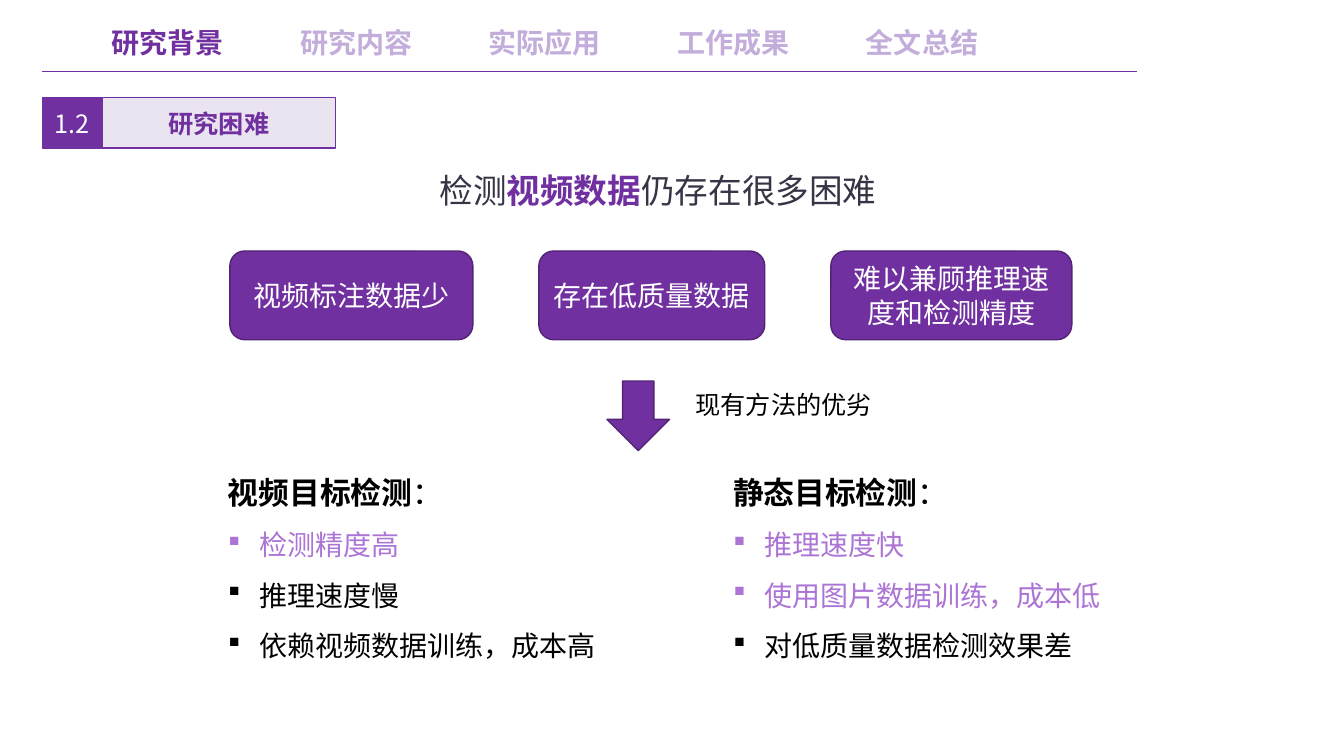
from dataclasses import dataclass
from lxml.etree import SubElement
from pptx import Presentation
from pptx.dml.color import RGBColor as Rgb
from pptx.enum.shapes import MSO_CONNECTOR as Link, MSO_SHAPE as Form
from pptx.enum.text import MSO_ANCHOR as Anchor, MSO_AUTO_SIZE as Fit, PP_ALIGN as Align
from pptx.oxml.ns import qn
from pptx.util import Inches, Pt

CELL = Inches(0.1)
COLS, ROWS = 133.3, 75


@dataclass(frozen=True)
class Theme:
    """Colours, type sizes and the font of the slide."""
    main: str = "7030A0"
    edge: str = "532476"
    pale: str = "E9E4EF"
    dim: str = "C2ADDB"
    good: str = "AB74D5"
    ink: str = "373545"
    black: str = "000000"
    white: str = "FFFFFF"
    title: int = 24
    head: int = 22
    text: int = 20
    note: int = 18
    font: str = "Noto Sans CJK SC"


@dataclass(frozen=True)
class Box:
    """A region measured in grid cells."""
    x: float
    y: float
    w: float
    h: float

    def sub(self, x, y, w, h):
        """Return a box placed relative to this one."""
        return Box(self.x + x, self.y + y, w, h)

    def emu(self):
        """Return left, top, width and height as lengths."""
        return [round(n * CELL) for n in (self.x, self.y, self.w, self.h)]


T = Theme()


def style(para, size, color, bold=False):
    """Set the font of a whole paragraph."""
    font = para.font
    font.size, font.bold, font.name = Pt(size), bold, T.font
    font.color.rgb = Rgb.from_string(color)
    SubElement(font._element, qn("a:ea"), typeface=T.font)


def put(holder, box):
    """Move a placeholder into a box and return its text frame."""
    holder.left, holder.top, holder.width, holder.height = box.emu()
    frame = holder.text_frame
    frame.auto_size, frame.word_wrap = Fit.NONE, True
    frame.vertical_anchor = Anchor.TOP
    return frame


def label(slide, box, text, size, color, bold=False):
    """Add one line of text."""
    frame = slide.shapes.add_textbox(*box.emu()).text_frame
    frame.word_wrap = False
    frame.text = text
    style(frame.paragraphs[0], size, color, bold)


def block(slide, box, form, fill, edge):
    """Add a filled shape with a thin outline."""
    shape = slide.shapes.add_shape(form, *box.emu())
    shape.shadow.inherit = False
    shape.fill.solid()
    shape.fill.fore_color.rgb = Rgb.from_string(fill)
    shape.line.color.rgb = Rgb.from_string(edge)
    shape.line.width = Pt(1)
    return shape


def write(shape, text, size, color, bold=False):
    """Centre a text in a shape."""
    frame = shape.text_frame
    frame.word_wrap, frame.vertical_anchor = True, Anchor.MIDDLE
    frame.text = text
    para = frame.paragraphs[0]
    para.alignment = Align.CENTER
    style(para, size, color, bold)


def nav(slide, box, names, now):
    """Draw the section names above a rule."""
    left, top, width, high = box.emu()
    base = top + high
    rule = slide.shapes.add_connector(Link.STRAIGHT, left, base, left + width, base)
    rule.line.color.rgb = Rgb.from_string(T.main)
    rule.line.width = Pt(1)
    SubElement(rule._element.spPr, qn("a:effectLst"))
    for i, name in enumerate(names):
        spot = box.sub(5.9 + 18.7 * i, 0, 13.2, 4.4)
        label(slide, spot, name, T.text, T.main if i == now else T.dim, True)


def badge(slide, box, num, name):
    """Draw the number and name of the section."""
    cut = 5.9
    mark = block(slide, box.sub(0, 0, cut, box.h), Form.RECTANGLE, T.main, T.main)
    write(mark, num, T.note, T.white)
    rest = box.sub(cut, 0, box.w - cut, box.h)
    write(block(slide, rest, Form.RECTANGLE, T.pale, T.main), name, T.note, T.main, True)


def title(slide, box, parts):
    """Fill the title, with its key words in bold."""
    para = put(slide.shapes.title, box).paragraphs[0]
    para.alignment = Align.LEFT
    style(para, T.title, T.ink)
    for text, key in parts:
        run = para.add_run()
        run.text = text
        if key:
            run.font.bold = True
            run.font.color.rgb = Rgb.from_string(T.main)


def cards(slide, box, items):
    """Draw a row of cards with equal gaps."""
    gap = (box.w - sum(wide for _, wide in items)) / (len(items) - 1)
    x = 0
    for text, wide in items:
        card = block(slide, box.sub(x, 0, wide, box.h), Form.ROUNDED_RECTANGLE, T.main, T.edge)
        write(card, text, T.text, T.white)
        x += wide + gap


def step(slide, box, text):
    """Draw the down arrow with its note."""
    block(slide, box.sub(0, 0, 6.2, box.h), Form.DOWN_ARROW, T.main, T.edge)
    label(slide, box.sub(7.8, 0.3, 19.7, 4), text, T.note, T.black)


def points(holder, box, head, items):
    """Fill a body with a heading and square bullets."""
    frame = put(holder, box)
    frame.margin_right = 0
    for i, (text, good) in enumerate([(head, False), *items]):
        para = frame.paragraphs[0] if i == 0 else frame.add_paragraph()
        para.line_spacing, para.space_before = 1.5, Pt(0)
        props = para._p.get_or_add_pPr()
        dent = Inches(0.31) if i else 0
        props.set("marL", str(dent))
        props.set("indent", str(-dent))
        if i:
            SubElement(props, qn("a:buFont"), typeface="Wingdings")
            SubElement(props, qn("a:buChar"), char="§")
            style(para, T.text, T.good if good else T.black)
            para.add_run().text = text
        else:
            SubElement(props, qn("a:buNone"))
            style(para, T.head, T.black)
            run = para.add_run()
            run.text, run.font.bold = text, True
            para.add_run().text = "："


def main():
    """Build the slide and save it."""
    deck = Presentation()
    deck.slide_width, deck.slide_height = round(COLS * CELL), ROWS * CELL
    slide = deck.slides.add_slide(deck.slide_layouts[3])
    nav(slide, Box(4.2, 2, 108.6, 5.1),
        ["研究背景", "研究内容", "实际应用", "工作成果", "全文总结"], 0)
    badge(slide, Box(4.2, 9.7, 29.1, 5), "1.2", "研究困难")
    title(slide, Box(42.6, 16.4, 47.2, 5),
          [("检测", False), ("视频数据", True), ("仍存在很多困难", False)])
    cards(slide, Box(22.8, 24.9, 83.5, 8.8),
          [("视频标注数据少", 24.1), ("存在低质量数据", 22.4), ("难以兼顾推理速度和检测精度", 23.9)])
    step(slide, Box(60.2, 37.8, 27.5, 6.9), "现有方法的优劣")
    lists = [
        ("视频目标检测", [("检测精度高", True), ("推理速度慢", False),
                    ("依赖视频数据训练，成本高", False)]),
        ("静态目标检测", [("推理速度快", True), ("使用图片数据训练，成本低", True),
                    ("对低质量数据检测效果差", False)]),
    ]
    area = Box(21.6, 44.7, 88.7, 21.1)
    for i, (head, items) in enumerate(lists):
        points(slide.placeholders[i + 1], area.sub(50.1 * i, 0, 38.6, area.h), head, items)
    deck.save("out.pptx")


if __name__ == "__main__":
    main()
